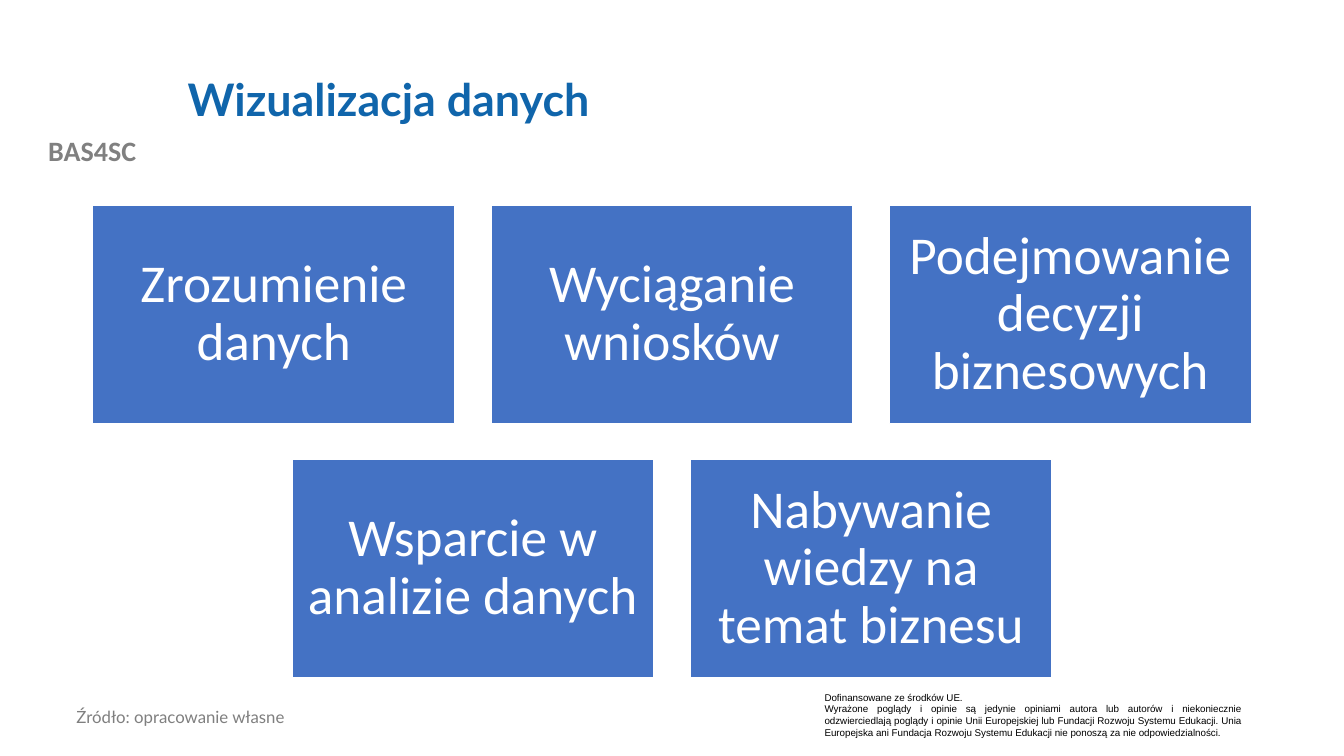
from pptx import Presentation
from pptx import util as u
from pptx.dml.color import RGBColor
from pptx.enum import shapes, text

Inches = u.Inches
left, center, full = text.PP_ALIGN.LEFT, text.PP_ALIGN.CENTER, text.PP_ALIGN.JUSTIFY
top, middle = text.MSO_ANCHOR.TOP, text.MSO_ANCHOR.MIDDLE


def color(code):
    return RGBColor.from_string(code)


def write(shape, lines, face, size, ink, bold=False, align=left, anchor=top, space=None):
    frame = shape.text_frame
    frame.word_wrap = True
    frame.auto_size = text.MSO_AUTO_SIZE.NONE
    frame.vertical_anchor = anchor
    frame.text = "\n".join(lines)
    for para in frame.paragraphs:
        para.alignment = align
        para.line_spacing = space
        font = para.font
        for key, value in {"name": face, "size": u.Pt(size), "bold": bold}.items():
            setattr(font, key, value)
        font.color.rgb = color(ink)


deck = Presentation()
deck.slide_width, deck.slide_height = Inches(13.33), Inches(7.5)
slide = deck.slides.add_slide(deck.slide_layouts[5])

title = slide.shapes.title
place = {"left": 1.76, "top": 0.4, "width": 10.66, "height": 1.22}
for key, value in place.items():
    setattr(title, key, Inches(value))
write(title, ["Wizualizacja danych"], "Lato", 32, "1065AB", True, left, middle, 0.9)

notice = [
    "Dofinansowane ze środków UE.",
    "Wyrażone poglądy i opinie są jedynie opiniami autora lub autorów i niekoniecznie "
    "odzwierciedlają poglądy i opinie Unii Europejskiej lub Fundacji Rozwoju Systemu "
    "Edukacji. Unia Europejska ani Fundacja Rozwoju Systemu Edukacji nie ponoszą za nie "
    "odpowiedzialności.",
]
labels = [
    ((0, 1.28, 1.83, 0.44), ["BAS4SC"], "Calibri", 20, "808080", True, center),
    ((8.08, 6.81, 4.33, 0.57), notice, "Arial", 7, "000000", False, full),
    ((0.66, 6.98, 5.01, 0.37), ["Źródło: opracowanie własne"], "Lato", 12, "7F7F7F", False, left, top, 0.9),
]
for area, *style in labels:
    write(slide.shapes.add_textbox(*map(Inches, area)), *style)

rows = [
    ["Zrozumienie danych", "Wyciąganie wniosków", "Podejmowanie decyzji biznesowych"],
    ["Wsparcie w analizie danych", "Nabywanie wiedzy na temat biznesu"],
]
wide, high, gap, mid = 3.59, 2.16, 0.36, 6.665
for row, names in enumerate(rows):
    start = mid - (len(names) * (wide + gap) - gap) / 2
    for col, name in enumerate(names):
        x, y = start + col * (wide + gap), 2.04 + row * (high + gap)
        card = slide.shapes.add_shape(
            shapes.MSO_SHAPE.RECTANGLE, Inches(x), Inches(y), Inches(wide), Inches(high))
        card.shadow.inherit = False
        card.fill.solid()
        card.fill.fore_color.rgb = color("4472C4")
        card.line.color.rgb = color("FFFFFF")
        card.line.width = u.Pt(1)
        for side in ("left", "top", "right", "bottom"):
            setattr(card.text_frame, "margin_" + side, Inches(0.16))
        write(card, [name], "Calibri", 38, "FFFFFF", False, center, middle, 0.9)

deck.save("out.pptx")
